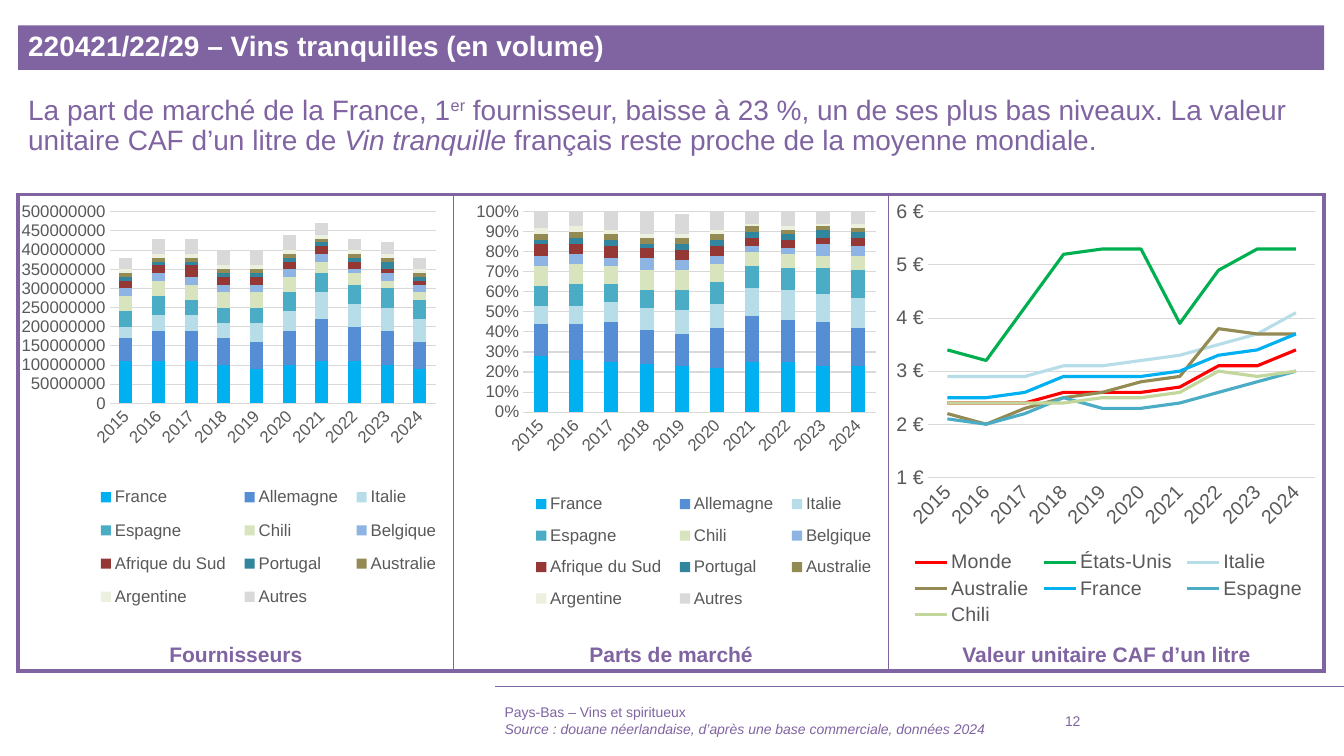
from lxml.etree import SubElement
from pptx import Presentation
from pptx.chart.data import CategoryChartData
from pptx.dml.color import RGBColor
from pptx.enum.chart import XL_CHART_TYPE as ChartType
from pptx.enum.chart import XL_LEGEND_POSITION as LegendPosition
from pptx.enum.chart import XL_MARKER_STYLE as MarkerStyle
from pptx.enum.chart import XL_TICK_MARK as TickMark
from pptx.enum.shapes import MSO_CONNECTOR as Connector
from pptx.enum.shapes import MSO_SHAPE as Shape
from pptx.enum.text import MSO_ANCHOR as Anchor
from pptx.enum.text import PP_ALIGN as Align
from pptx.oxml.ns import qn
from pptx.util import Cm, Pt

PURPLE, GREY, LIGHT_GREY = "8064A2", "595959", "D9D9D9"
LEFT, TOP, PANEL_WIDTH, PANEL_HEIGHT = 0.46, 4.9, 10.97, 12.01
FULL_WIDTH = 3 * PANEL_WIDTH
YEARS = [str(year) for year in range(2015, 2025)]
SUPPLIERS = {
    "France": "00B0F0", "Allemagne": "558ED5", "Italie": "B7DEE8",
    "Espagne": "4BACC6", "Chili": "D7E4BD", "Belgique": "8EB4E3",
    "Afrique du Sud": "953735", "Portugal": "31859C",
    "Australie": "948A54", "Argentine": "EBF1DE", "Autres": "D9D9D9",
}
TEN_MILLION_LITRES = [
    [11, 11, 11, 10, 9, 10, 11, 11, 10, 9],
    [6, 8, 8, 7, 7, 9, 11, 9, 9, 7],
    [3, 4, 4, 4, 5, 5, 7, 6, 6, 6],
    [4, 5, 4, 4, 4, 5, 5, 5, 5, 5],
    [4, 4, 4, 4, 4, 4, 3, 3, 2, 2],
    [2, 2, 2, 2, 2, 2, 2, 1, 2, 2],
    [2, 2, 3, 2, 2, 2, 2, 2, 1, 1],
    [1, 1, 1, 1, 1, 1, 1, 1, 2, 1],
    [1] * 10,
    [1] * 10,
    [3, 4, 4, 4, 4, 4, 3, 3, 3, 3],
]
SHARE_PERCENT = [
    [28, 26, 25, 24, 23, 22, 25, 25, 23, 23],
    [16, 18, 20, 17, 16, 20, 23, 21, 22, 19],
    [9, 9, 10, 11, 12, 12, 14, 15, 14, 15],
    [10, 11, 9, 9, 10, 11, 11, 11, 13, 14],
    [10, 10, 9, 10, 10, 9, 7, 7, 6, 7],
    [5, 5, 4, 6, 5, 4, 3, 3, 6, 5],
    [6, 5, 6, 5, 5, 5, 4, 4, 3, 4],
    [2, 3, 3, 2, 3, 3, 3, 3, 4, 3],
    [3, 3, 3, 3, 3, 3, 3, 2, 2, 2],
    [3, 3, 2, 2, 2, 2, 1, 2, 1, 2],
    [8, 8, 9, 11, 10, 9, 6, 7, 7, 7],
]
PRICE_COLORS = {
    "Monde": "FF0000", "États-Unis": "00B050", "Italie": "B7DEE8",
    "Australie": "948A54", "France": "00B0F0", "Espagne": "4BACC6",
    "Chili": "C3D69B",
}
PRICES = [
    [2.4, 2.4, 2.4, 2.6, 2.6, 2.6, 2.7, 3.1, 3.1, 3.4],
    [3.4, 3.2, 4.2, 5.2, 5.3, 5.3, 3.9, 4.9, 5.3, 5.3],
    [2.9, 2.9, 2.9, 3.1, 3.1, 3.2, 3.3, 3.5, 3.7, 4.1],
    [2.2, 2, 2.3, 2.5, 2.6, 2.8, 2.9, 3.8, 3.7, 3.7],
    [2.5, 2.5, 2.6, 2.9, 2.9, 2.9, 3, 3.3, 3.4, 3.7],
    [2.1, 2, 2.2, 2.5, 2.3, 2.3, 2.4, 2.6, 2.8, 3],
    [2.4, 2.4, 2.4, 2.4, 2.5, 2.5, 2.6, 3, 2.9, 3],
]


def rgb(color):
    """Turn a hex string into a colour."""
    return RGBColor.from_string(color)


def style_font(font, size, color, bold=False, italic=False):
    """Set the common properties of a font."""
    font.name, font.size = "Arial", Pt(size)
    font.bold, font.italic = bold, italic
    font.color.rgb = rgb(color)


def add_text(slide, box, lines, size, bold=False, align=Align.LEFT, anchor=Anchor.TOP):
    """Add a text box with one paragraph per line, each a (text, italic) pair."""
    frame = slide.shapes.add_textbox(*map(Cm, box)).text_frame
    frame.word_wrap, frame.vertical_anchor = True, anchor
    for index, (text, italic) in enumerate(lines):
        paragraph = frame.add_paragraph() if index else frame.paragraphs[0]
        paragraph.text, paragraph.alignment = text, align
        style_font(paragraph.runs[0].font, size, PURPLE, bold, italic)


def add_title(slide, text):
    """Add the filled title band."""
    band = slide.shapes.add_shape(
        Shape.RECTANGLE, Cm(LEFT), Cm(0.64), Cm(FULL_WIDTH), Cm(1.12))
    band.shadow.inherit = False
    band.fill.solid()
    band.fill.fore_color.rgb = rgb(PURPLE)
    band.line.fill.background()
    band.text_frame.text = text
    band.text_frame.vertical_anchor = Anchor.MIDDLE
    paragraph = band.text_frame.paragraphs[0]
    paragraph.alignment, paragraph.line_spacing = Align.LEFT, 0.9
    style_font(paragraph.runs[0].font, 20, "FFFFFF", bold=True)


def add_message(slide):
    """Add the key message with its superscript and italic parts."""
    frame = slide.shapes.add_textbox(
        Cm(LEFT), Cm(2.29), Cm(FULL_WIDTH), Cm(2.06)).text_frame
    frame.word_wrap = True
    paragraph = frame.paragraphs[0]
    paragraph.line_spacing = 0.9
    for text, italic, baseline in (
        ("La part de marché de la France, 1", False, 0),
        ("er", False, 30000),
        (" fournisseur, baisse à 23 %, un de ses plus bas niveaux. "
         "La valeur unitaire CAF d’un litre de ", False, 0),
        ("Vin tranquille ", True, 0),
        ("français reste proche de la moyenne mondiale.", False, 0),
    ):
        run = paragraph.add_run()
        run.text = text
        style_font(run.font, 20, PURPLE, italic=italic)
        run.font._element.set("baseline", str(baseline))


def add_panels(slide):
    """Add the one-row table that frames the three charts."""
    table = slide.shapes.add_table(
        1, 3, Cm(LEFT), Cm(TOP), Cm(FULL_WIDTH), Cm(PANEL_HEIGHT)).table
    table.first_row = table.horz_banding = False
    for index, cell in enumerate(table.rows[0].cells):
        properties = cell._tc.get_or_add_tcPr()
        widths = {"a:lnL": 1 if index else 3, "a:lnR": 3 if index == 2 else 1,
                  "a:lnT": 3, "a:lnB": 3}
        for tag, width in widths.items():
            border = SubElement(properties, qn(tag), w=str(Pt(width)))
            fill = SubElement(border, qn("a:solidFill"))
            SubElement(fill, qn("a:srgbClr"), val=PURPLE)
        cell.fill.background()


def set_layout(parent, position, bounds, inner=False):
    """Place a plot area or legend by fractions of the chart."""
    for old in parent.findall(qn("c:layout")):
        parent.remove(old)
    layout = SubElement(parent, qn("c:layout"))
    manual = SubElement(layout, qn("c:manualLayout"))
    if inner:
        SubElement(manual, qn("c:layoutTarget"), val="inner")
    for tag in ("xMode", "yMode"):
        SubElement(manual, qn(f"c:{tag}"), val="edge")
    for tag, value in zip("xywh", bounds):
        SubElement(manual, qn(f"c:{tag}"), val=str(value))
    parent.insert(position, layout)


def style_axes(chart, size, scale, number_format):
    """Format both axes; scale is minimum, maximum and step."""
    category, value = chart.category_axis, chart.value_axis
    for axis in (category, value):
        axis.major_tick_mark = axis.minor_tick_mark = TickMark.NONE
        style_font(axis.tick_labels.font, size, GREY)
    category.format.line.color.rgb = rgb(LIGHT_GREY)
    category.format.line.width = Pt(0.75)
    category._element.find(qn("c:txPr")).find(qn("a:bodyPr")).set("rot", "-2700000")
    value.minimum_scale, value.maximum_scale, value.major_unit = scale
    value.tick_labels.number_format = number_format
    value.tick_labels.number_format_is_linked = False
    value.format.line.fill.background()
    value.major_gridlines.format.line.color.rgb = rgb(LIGHT_GREY)
    value.major_gridlines.format.line.width = Pt(0.75)


def add_panel_chart(slide, panel, kind, colors, rows, size, scale,
                    number_format, plot_bounds, legend_bounds):
    """Add a chart with its legend in the given panel."""
    data = CategoryChartData()
    data.categories = YEARS
    for name, values in zip(colors, rows):
        data.add_series(name, values)
    chart = slide.shapes.add_chart(
        kind, Cm(LEFT + panel * PANEL_WIDTH), Cm(TOP),
        Cm(PANEL_WIDTH), Cm(10.97), data).chart
    chart.has_title = False
    style_font(chart.font, size, "000000")
    style_axes(chart, size, scale, number_format)
    plot = chart.plots[0]
    plot.vary_by_categories = False
    if kind == ChartType.COLUMN_STACKED:
        plot.gap_width, plot.overlap = 150, 100
    for series, color in zip(plot.series, colors.values()):
        if kind == ChartType.LINE:
            series.smooth = False
            series.marker.style = MarkerStyle.NONE
            series.format.line.color.rgb = rgb(color)
            series.format.line.width = Pt(2.25)
        else:
            series.format.fill.solid()
            series.format.fill.fore_color.rgb = rgb(color)
    chart.has_legend = True
    legend = chart.legend
    legend.position, legend.include_in_layout = LegendPosition.BOTTOM, False
    style_font(legend.font, size, GREY)
    set_layout(chart._chartSpace.chart.plotArea, 0, plot_bounds, inner=True)
    set_layout(legend._element, 1, legend_bounds)


def add_footer(slide):
    """Add the footer rule, source and page number."""
    rule = slide.shapes.add_connector(
        Connector.STRAIGHT, Cm(33.87), Cm(17.3), Cm(12.47), Cm(17.3))
    rule.line.color.rgb, rule.line.width = rgb(PURPLE), Pt(0.5)
    SubElement(rule._element.spPr, qn("a:effectLst"))
    source = "Source : douane néerlandaise, d’après une base commerciale, données 2024"
    add_text(slide, (12.47, 17.65, 13.79, 1.02),
             [("Pays-Bas – Vins et spiritueux", False), (source, True)],
             10, anchor=Anchor.MIDDLE)
    add_text(slide, (26.59, 17.65, 2.51, 1.02), [("12", False)], 10, anchor=Anchor.MIDDLE)


def main():
    """Build and save the slide."""
    presentation = Presentation()
    presentation.slide_width, presentation.slide_height = Cm(33.87), Cm(19.05)
    slide = presentation.slides.add_slide(presentation.slide_layouts[6])
    add_title(slide, "220421/22/29 – Vins tranquilles (en volume)")
    add_message(slide)
    add_panels(slide)
    captions = ("Fournisseurs", "Parts de marché", "Valeur unitaire CAF d’un litre")
    for panel, caption in enumerate(captions):
        add_text(slide, (LEFT + panel * PANEL_WIDTH, 16.03, PANEL_WIDTH, 0.89),
                 [(caption, False)], 15, bold=True, align=Align.CENTER)
    volumes = [[value * 10_000_000 for value in row] for row in TEN_MILLION_LITRES]
    shares = [[value / 100 for value in row] for row in SHARE_PERCENT]
    add_panel_chart(slide, 0, ChartType.COLUMN_STACKED, SUPPLIERS, volumes, 12,
                    (0, 500_000_000, 50_000_000), "General",
                    (0.21, 0.04, 0.75, 0.44), (0.16, 0.64, 0.83, 0.34))
    add_panel_chart(slide, 1, ChartType.COLUMN_STACKED, SUPPLIERS, shares, 12,
                    (0, 1, 0.1), "0%",
                    (0.16, 0.04, 0.81, 0.46), (0.16, 0.66, 0.83, 0.32))
    add_panel_chart(slide, 2, ChartType.LINE, PRICE_COLORS, PRICES, 14,
                    (1, 6, 1), '#,##0\\ "€"',
                    (0.09, 0.04, 0.89, 0.61), (0.04, 0.81, 0.93, 0.19))
    add_footer(slide)
    presentation.save("out.pptx")


if __name__ == "__main__":
    main()
